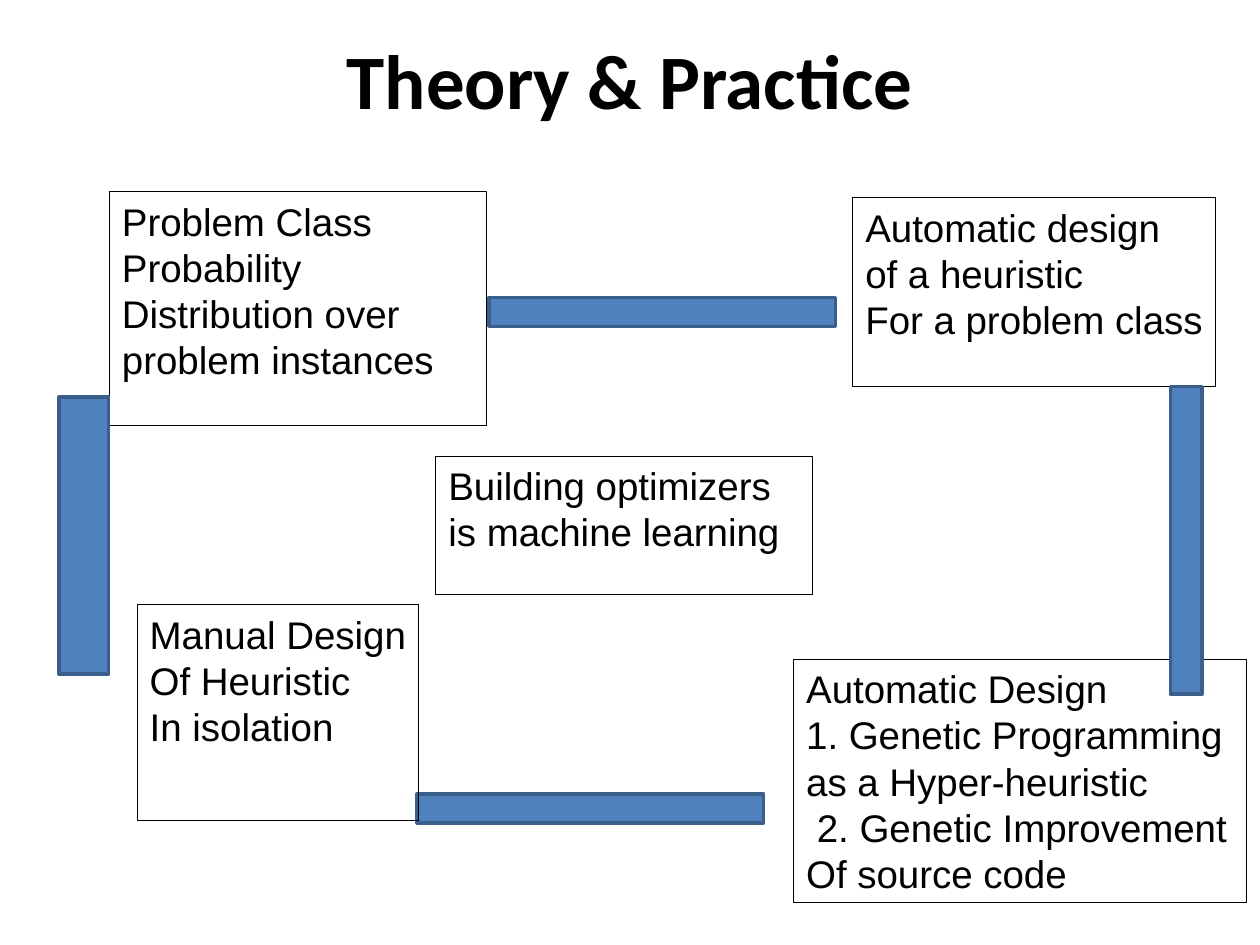
from pptx import Presentation
from pptx import util as u
from pptx.dml.color import RGBColor
from pptx.enum import shapes, text

COLORS = {"ink": "000000", "bar": "4F81BD", "bar_edge": "3A5F8B"}


class Deck:
    def __init__(self, width, height):
        self.prs = Presentation()
        self.prs.slide_width, self.prs.slide_height = u.Pt(width), u.Pt(height)
        self.s = self.prs.slides.add_slide(self.prs.slide_layouts[6])

    def color(self, name):
        return RGBColor.from_string(COLORS[name])

    def style(self, p, font, size, bold=False):
        p.font.name, p.font.size, p.font.bold = font, u.Pt(size), bold
        p.font.color.rgb = self.color("ink")

    def title(self, words, *box):
        tf = self.s.shapes.add_textbox(*map(u.Pt, box)).text_frame
        tf.word_wrap = True
        tf.vertical_anchor = text.MSO_ANCHOR.MIDDLE
        p = tf.paragraphs[0]
        p.text = words
        p.alignment = text.PP_ALIGN.CENTER
        self.style(p, "Calibri", 44, bold=True)

    def rect(self, box, edge, weight):
        sp = self.s.shapes.add_shape(shapes.MSO_SHAPE.RECTANGLE, *map(u.Pt, box))
        sp.shadow.inherit = False
        sp.line.color.rgb = self.color(edge)
        sp.line.width = u.Pt(weight)
        return sp

    def bar(self, *box):
        sp = self.rect(box, "bar_edge", 2)
        sp.fill.solid()
        sp.fill.fore_color.rgb = self.color("bar")

    def note(self, lines, *box):
        """Outlined, unfilled box with one paragraph per line."""
        sp = self.rect(box, "ink", 0.5)
        sp.fill.background()
        tf = sp.text_frame
        tf.word_wrap = True
        tf.margin_right = 0  # keeps the longest lines from wrapping
        tf.vertical_anchor = text.MSO_ANCHOR.TOP
        tf.text = "\n".join(lines)
        for p in tf.paragraphs:
            p.alignment = text.PP_ALIGN.LEFT
            self.style(p, "Arial", 22)


def main():
    deck = Deck(720, 540)
    deck.title("Theory & Practice", 0, 0, 720, 90)

    deck.bar(238.3, 453.6, 198, 16.6)
    deck.bar(279.4, 169.9, 198, 16.6)

    deck.note(["Automatic design", "of a heuristic", "For a problem class"],
              487.4, 113, 207.4, 108)
    deck.note(["Automatic Design", "1. Genetic Programming", "as a Hyper-heuristic",
               " 2. Genetic Improvement", "Of source code"],
              453.6, 376.6, 258.5, 139)
    deck.note(["Manual Design", "Of Heuristic", "In isolation"],
              78.5, 345.6, 160.6, 123.1)
    deck.note(["Problem Class", "Probability", "Distribution over", "problem instances"],
              62.6, 109.4, 215.3, 133.9)
    deck.note(["Building optimizers", "is machine learning"],
              249.1, 260.6, 215.3, 79.2)

    deck.bar(33.8, 226.8, 28.4, 158.4)
    deck.bar(668.9, 221, 18, 175.7)

    deck.prs.save("out.pptx")


if __name__ == "__main__":
    main()
